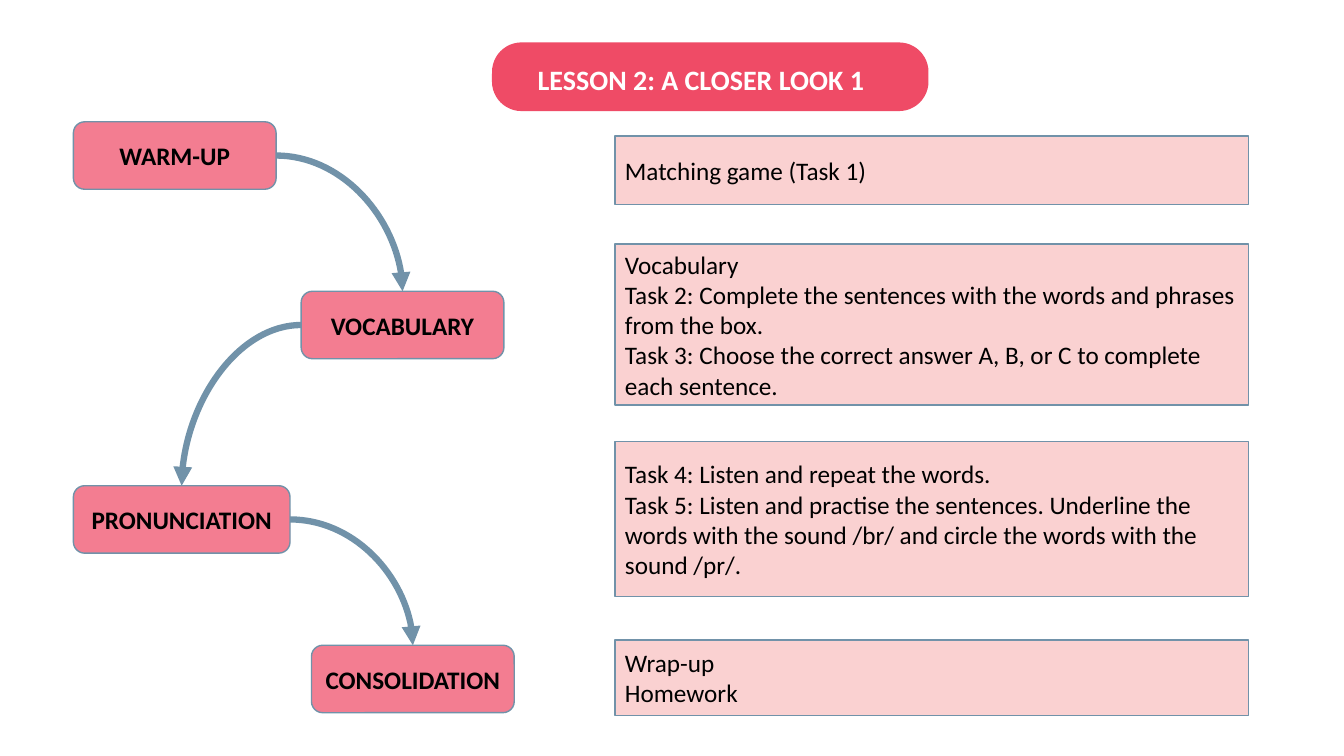
from itertools import pairwise

from lxml.etree import SubElement
from pptx import Presentation
from pptx.dml.color import RGBColor
from pptx.enum.shapes import MSO_CONNECTOR, MSO_SHAPE
from pptx.enum.text import MSO_ANCHOR, PP_ALIGN
from pptx.oxml.ns import qn
from pptx.util import Cm, Pt

FONT = "Calibri"
OUTLINE = "7192A9"
STEP_HEIGHT = 1.7

STEPS = [  # label, left, top, width in cm
    ("WARM-UP", 1.85, 3.07, 5.11),
    ("VOCABULARY", 7.59, 7.34, 5.11),
    ("PRONUNCIATION", 1.85, 12.24, 5.46),
    ("CONSOLIDATION", 7.85, 16.26, 5.11),
]
DETAILS = [  # top, height in cm, lines
    (3.43, 1.73, ["Matching game (Task 1)"]),
    (6.15, 4.06, [
        "Vocabulary",
        "Task 2: Complete the sentences with the words and phrases from the box.",
        "Task 3: Choose the correct answer A, B, or C to complete each sentence.",
    ]),
    (11.13, 3.91, [
        "Task 4: Listen and repeat the words.",
        "Task 5: Listen and practise the sentences. Underline the words "
        "with the sound /br/ and circle the words with the sound /pr/.",
    ]),
    (16.13, 1.9, ["Wrap-up", "Homework"]),
]


def color(hex_string):
    return RGBColor.from_string(hex_string)


def add_box(kind, left, top, width, height, fill, lines=(), align=PP_ALIGN.LEFT, bold=False):
    """Add a filled shape; a box with lines of text also gets the outline."""
    shape = slide.shapes.add_shape(kind, Cm(left), Cm(top), Cm(width), Cm(height))
    shape.shadow.inherit = False
    shape.fill.solid()
    shape.fill.fore_color.rgb = color(fill)
    if not lines:
        shape.line.fill.background()
        return shape
    shape.line.color.rgb = color(OUTLINE)
    shape.line.width = Pt(1)
    frame = shape.text_frame
    frame.word_wrap = True
    frame.vertical_anchor = MSO_ANCHOR.MIDDLE
    frame.text = "\n".join(lines)
    for paragraph in frame.paragraphs:
        paragraph.alignment = align
        paragraph.font.name = FONT
        paragraph.font.size = Pt(18)
        paragraph.font.bold = bold
        paragraph.font.color.rgb = color("000000")
    return shape


presentation = Presentation()
presentation.slide_width = Cm(33.87)
presentation.slide_height = Cm(19.05)
slide = presentation.slides.add_slide(presentation.slide_layouts[6])

# Title
banner = add_box(MSO_SHAPE.ROUNDED_RECTANGLE, 12.4, 1.07, 11.0, 1.73, "EF4B66")
banner.adjustments[0] = 0.43
title = slide.shapes.add_textbox(Cm(13.3), Cm(1.45), Cm(10), Cm(1.11))
title.text_frame.word_wrap = True
title.text_frame.text = "LESSON 2: A CLOSER LOOK 1"
paragraph = title.text_frame.paragraphs[0]
paragraph.font.name = FONT
paragraph.font.size = Pt(20)
paragraph.font.bold = True
paragraph.font.color.rgb = color("FFFFFF")

# Lesson steps
step_boxes = [
    add_box(MSO_SHAPE.ROUNDED_RECTANGLE, left, top, width, STEP_HEIGHT, "F37D91",
            [label], PP_ALIGN.CENTER, bold=True)
    for label, left, top, width in STEPS
]

# Curved arrows from the side of each step to the top of the next
TOP_SITE, LEFT_SITE, RIGHT_SITE = 0, 1, 3
for step, following in pairwise(step_boxes):
    arrow = slide.shapes.add_connector(MSO_CONNECTOR.CURVE, 0, 0, 0, 0)
    arrow.begin_connect(step, RIGHT_SITE if following.left > step.left else LEFT_SITE)
    arrow.end_connect(following, TOP_SITE)
    arrow.line.color.rgb = color(OUTLINE)
    arrow.line.width = Pt(4.5)
    properties = arrow.element.spPr
    properties.find(qn("a:prstGeom")).set("prst", "curvedConnector2")
    SubElement(properties.find(qn("a:ln")), qn("a:tailEnd"), type="triangle")
    SubElement(properties, qn("a:effectLst"))

# Activities of each step
for top, height, lines in DETAILS:
    detail = add_box(MSO_SHAPE.RECTANGLE, 15.5, top, 15.96, height, "F7A5A5", lines)
    fill_color = detail.element.spPr.find(qn("a:solidFill"))[0]
    SubElement(fill_color, qn("a:alpha"), val="50000")

presentation.save("out.pptx")
